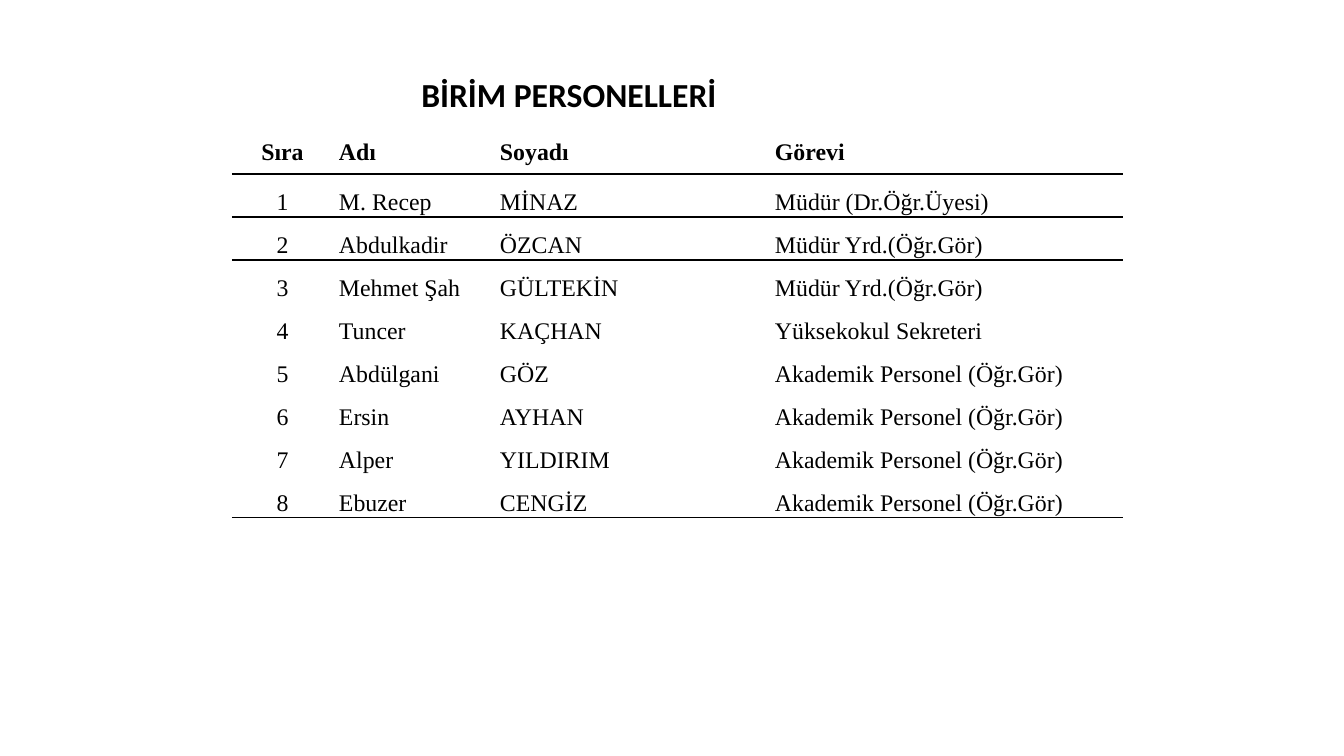
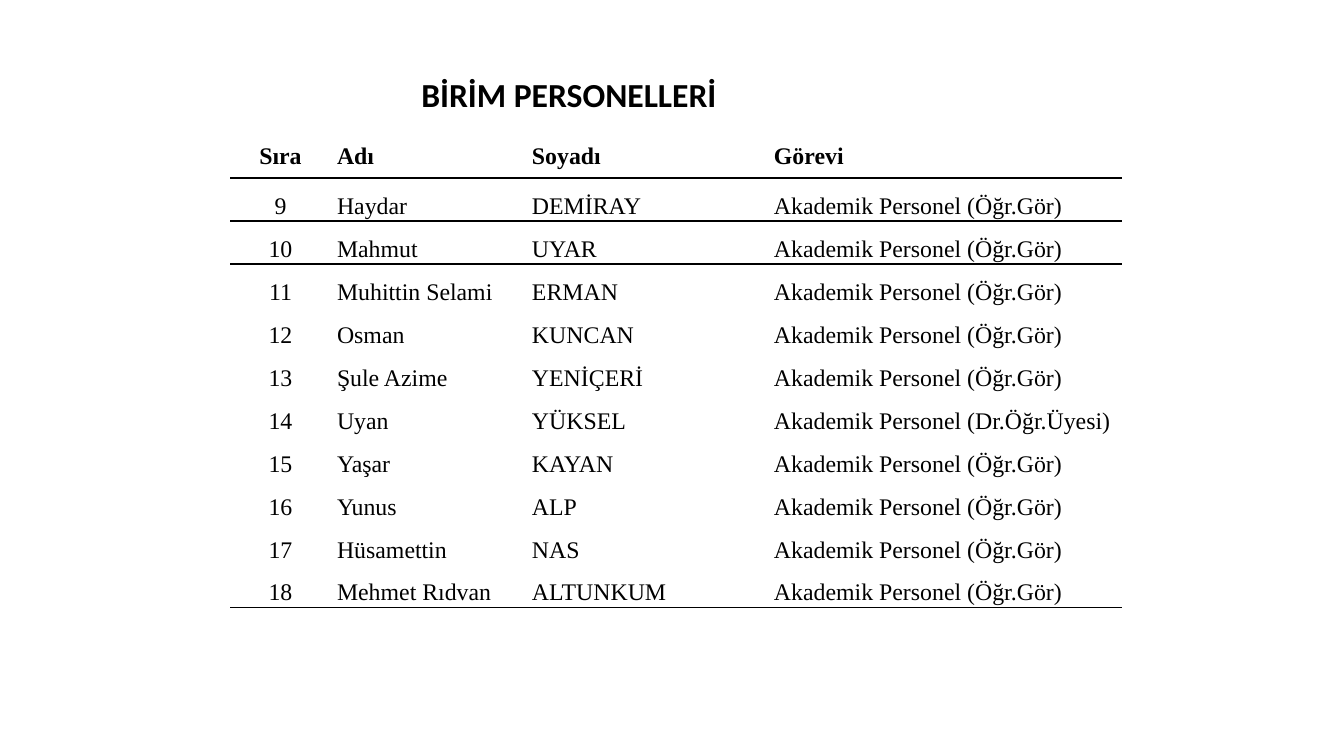
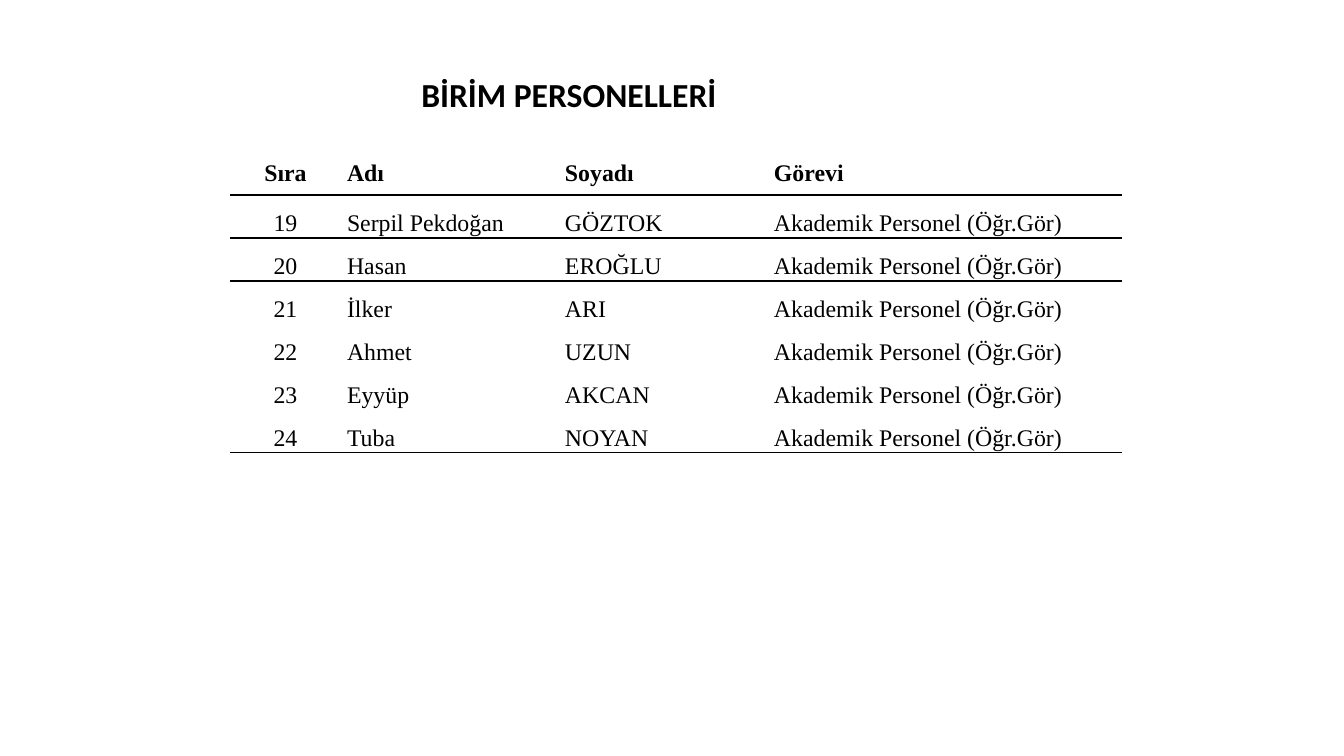
from lxml.etree import SubElement
from pptx import Presentation
from pptx.dml.color import RGBColor
from pptx.enum.text import MSO_ANCHOR, MSO_AUTO_SIZE, PP_ALIGN
from pptx.oxml import parse_xml
from pptx.oxml.ns import nsdecls, qn
from pptx.util import Emu, Pt

INK = "000000"
HEAD, BODY = "Calibri", "Times New Roman"
TITLE = "BİRİM PERSONELLERİ"
TITLE_BOX = (196, 69, 746, 92)
LABELS = ("Sıra", "Adı", "Soyadı", "Görevi")
HEAD_H, ROW_H = 48, 43
NO_GRID = "{2D5ABB26-0587-4C30-8999-92F81FD0307C}"

CHIEF = "Müdür (Dr.Öğr.Üyesi)"
DEPUTY = "Müdür Yrd.(Öğr.Gör)"
STAFF = "Akademik Personel (Öğr.Gör)"
DOCTOR = "Akademik Personel (Dr.Öğr.Üyesi)"

# Each page: left, top, column widths, first number, people
PAGES = [
    (232, 126, (101, 161, 275, 354), 1, [
        ("M. Recep", "MİNAZ", CHIEF),
        ("Abdulkadir", "ÖZCAN", DEPUTY),
        ("Mehmet Şah", "GÜLTEKİN", DEPUTY),
        ("Tuncer", "KAÇHAN", "Yüksekokul Sekreteri"),
        ("Abdülgani", "GÖZ", STAFF),
        ("Ersin", "AYHAN", STAFF),
        ("Alper", "YILDIRIM", STAFF),
        ("Ebuzer", "CENGİZ", STAFF),
    ]),
    (230, 130, (101, 195, 242, 354), 9, [
        ("Haydar", "DEMİRAY", STAFF),
        ("Mahmut", "UYAR", STAFF),
        ("Muhittin Selami", "ERMAN", STAFF),
        ("Osman", "KUNCAN", STAFF),
        ("Şule Azime", "YENİÇERİ", STAFF),
        ("Uyan", "YÜKSEL", DOCTOR),
        ("Yaşar", "KAYAN", STAFF),
        ("Yunus", "ALP", STAFF),
        ("Hüsamettin", "NAS", STAFF),
        ("Mehmet Rıdvan", "ALTUNKUM", STAFF),
    ]),
    (230, 147, (111, 218, 209, 354), 19, [
        ("Serpil Pekdoğan", "GÖZTOK", STAFF),
        ("Hasan", "EROĞLU", STAFF),
        ("İlker", "ARI", STAFF),
        ("Ahmet", "UZUN", STAFF),
        ("Eyyüp", "AKCAN", STAFF),
        ("Tuba", "NOYAN", STAFF),
    ]),
]


def px(n):
    return Emu(round(n * 914400 / 100.8))


def color(code):
    return RGBColor.from_string(code)


def write(frame, text, font=BODY, size=17, bold=False, center=False, space=1.0):
    para = frame.paragraphs[0]
    para.alignment = PP_ALIGN.CENTER if center else PP_ALIGN.LEFT
    para.line_spacing = space
    run = para.add_run()
    run.text = text
    run.font.name, run.font.size, run.font.bold = font, Pt(size), bold
    run.font.color.rgb = color(INK)


def add_title(slide, box):
    frame = slide.shapes.add_textbox(*map(px, box)).text_frame
    frame.word_wrap = True
    frame.auto_size = MSO_AUTO_SIZE.SHAPE_TO_FIT_TEXT
    write(frame, TITLE, font=HEAD, size=24, bold=True, center=True)


def rule(cell, *sides):
    """Draw a 1 pt line on the given sides, T before B."""
    props = cell._tc.get_or_add_tcPr()
    for spot, side in enumerate(sides):
        props.insert(spot, parse_xml(
            f'<a:ln{side} {nsdecls("a")} w="{Pt(1)}"><a:solidFill>'
            f'<a:srgbClr val="{INK}"/></a:solidFill></a:ln{side}>'))


def add_roster(slide, left, top, widths, first, people):
    rows = [LABELS] + [(str(n), *who) for n, who in enumerate(people, first)]
    last = len(rows) - 1
    high = HEAD_H + ROW_H * last
    table = slide.shapes.add_table(
        len(rows), len(widths), px(left), px(top), px(sum(widths)), px(high)).table
    table.first_row = table.horz_banding = False
    props = table._tbl.tblPr
    style = props.find(qn("a:tableStyleId"))
    if style is None:
        style = SubElement(props, qn("a:tableStyleId"))
    style.text = NO_GRID
    for col, wide in zip(table.columns, widths):
        col.width = px(wide)
    ruled = (0, 1, last)
    for r, texts in enumerate(rows):
        table.rows[r].height = px(ROW_H if r else HEAD_H)
        sides = [s for s, line in (("T", r - 1), ("B", r)) if line in ruled]
        for c, text in enumerate(texts):
            cell = table.cell(r, c)
            cell.margin_left = cell.margin_right = px(6)
            cell.margin_top = cell.margin_bottom = 0
            cell.vertical_anchor = MSO_ANCHOR.MIDDLE if r else MSO_ANCHOR.TOP
            cell.fill.background()
            rule(cell, *sides)
            write(cell.text_frame, text, bold=r == 0, center=c == 0, space=1.5)


def main():
    deck = Presentation()
    deck.slide_width, deck.slide_height = px(1344), px(756)
    for page in PAGES:
        slide = deck.slides.add_slide(deck.slide_layouts[6])
        add_title(slide, TITLE_BOX)
        add_roster(slide, *page)
    deck.save("out.pptx")


if __name__ == "__main__":
    main()
